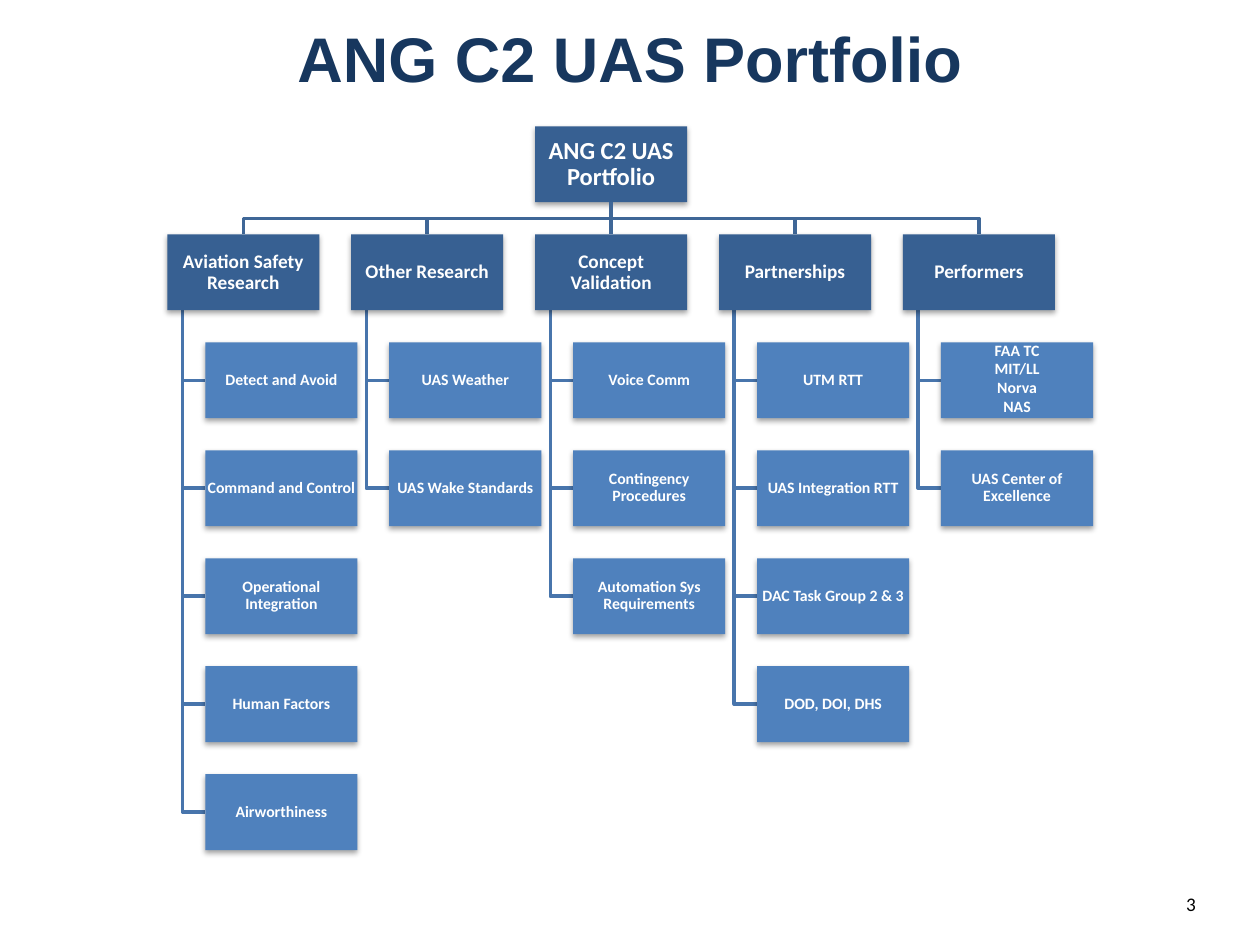
"""Build the ANG C2 UAS Portfolio organisation chart slide."""
from dataclasses import dataclass

import pptx
import pptx.dml.color
import pptx.enum.shapes
import pptx.enum.text
import pptx.oxml
import pptx.oxml.ns
import pptx.util
from pptx.util import Pt


@dataclass(frozen=True)
class Theme:
    title: str = "17375E"
    head: str = "376092"
    item: str = "4F81BD"
    trunk: str = "3F6797"
    branch: str = "4875AC"
    label: str = "FFFFFF"
    number: str = "000000"
    title_size: float = 36
    root_size: float = 14
    head_size: float = 11
    item_size: float = 9
    title_font: str = "Arial"
    font: str = "Calibri"


theme = Theme()
rgb = pptx.dml.color.RGBColor.from_string
align = pptx.enum.text.PP_ALIGN
anchor = pptx.enum.text.MSO_ANCHOR
SHADOW = (
    f'<a:outerShdw {pptx.oxml.ns.nsdecls("a")} blurRad="40000" dist="23000" dir="5400000" '
    'rotWithShape="0"><a:srgbClr val="000000"><a:alpha val="35000"/></a:srgbClr></a:outerShdw>'
)

portfolio = {
    "Aviation Safety Research": [
        "Detect and Avoid", "Command and Control", "Operational Integration",
        "Human Factors", "Airworthiness"],
    "Other Research": ["UAS Weather", "UAS Wake Standards"],
    "Concept Validation": [
        "Voice Comm", "Contingency Procedures", "Automation Sys Requirements"],
    "Partnerships": [
        "UTM RTT", "UAS Integration RTT", "DAC Task Group 2 & 3", "DOD, DOI, DHS"],
    "Performers": ["FAA TC\nMIT/LL\nNorva\nNAS", "UAS Center of Excellence"],
}
box_width, box_height = 86.9, 43.4
column_pitch, row_pitch = 105.1, 61.7
chart_left, chart_top = 95.6, 72.2
stem_indent, item_indent = box_width / 10, box_width / 4
head_top = chart_top + row_pitch
root_left = chart_left + 2 * column_pitch
root_middle = root_left + box_width / 2
root_bottom = chart_top + box_height
bus_y = (root_bottom + head_top) / 2

deck = pptx.Presentation()
deck.slide_width, deck.slide_height = Pt(720), Pt(540)
slide = deck.slides.add_slide(deck.slide_layouts[5])


def add_route(points, color):
    start, *rest = [(Pt(x), Pt(y)) for x, y in points]
    builder = slide.shapes.build_freeform(*start)
    builder.add_line_segments(rest, close=False)
    route = builder.convert_to_shape()
    route.shadow.inherit = False
    route.fill.background()
    route.line.color.rgb = rgb(color)
    route.line.width = Pt(2)


def add_box(label, left, top, color, size):
    box = slide.shapes.add_shape(
        pptx.enum.shapes.MSO_SHAPE.RECTANGLE,
        Pt(left), Pt(top), Pt(box_width), Pt(box_height))
    box.shadow.inherit = False
    effects = box._element.spPr.find(pptx.oxml.ns.qn("a:effectLst"))
    effects.append(pptx.oxml.parse_xml(SHADOW))
    box.fill.solid()
    box.fill.fore_color.rgb = rgb(color)
    box.line.fill.background()
    frame = box.text_frame
    frame.word_wrap = True
    frame.vertical_anchor = anchor.MIDDLE
    frame.margin_left = frame.margin_right = Pt(0.6)
    frame.margin_top = frame.margin_bottom = Pt(0.6)
    frame.text = label
    for paragraph in frame.paragraphs:
        paragraph.alignment = align.CENTER
        paragraph.line_spacing = 0.7 if "\n" in label else 0.9
        paragraph.space_after = Pt(size * 0.35)
        paragraph.font.name = theme.font
        paragraph.font.size = Pt(size)
        paragraph.font.bold = True
        paragraph.font.color.rgb = rgb(theme.label)
    return box


title = slide.shapes.title
title.left, title.top, title.width, title.height = Pt(36), Pt(0), Pt(648), Pt(66)
title.text_frame.text = "ANG C2 UAS Portfolio"
title.text_frame.vertical_anchor = anchor.MIDDLE
heading = title.text_frame.paragraphs[0]
heading.alignment = align.CENTER
heading.font.name = theme.title_font
heading.font.size = Pt(theme.title_size)
heading.font.bold = True
heading.font.color.rgb = rgb(theme.title)

for column, items in enumerate(portfolio.values()):
    head_left = chart_left + column * column_pitch
    head_middle = head_left + box_width / 2
    stem_x = head_left + stem_indent
    if head_left != root_left:
        add_route([(root_middle, root_bottom), (root_middle, bus_y),
                   (head_middle, bus_y), (head_middle, head_top)], theme.trunk)
    for row in range(len(items), 0, -1):
        item_middle = head_top + row * row_pitch + box_height / 2
        add_route([(stem_x, head_top + box_height), (stem_x, item_middle),
                   (head_left + item_indent, item_middle)], theme.branch)

root = add_box("ANG C2 UAS Portfolio", root_left, chart_top, theme.head, theme.root_size)
heads = []
for column, (area, items) in enumerate(portfolio.items()):
    head_left = chart_left + column * column_pitch
    heads.append(add_box(area, head_left, head_top, theme.head, theme.head_size))
    for row, item in enumerate(items, start=1):
        add_box(item, head_left + item_indent, head_top + row * row_pitch,
                theme.item, theme.item_size)

trunk = slide.shapes.add_connector(pptx.enum.shapes.MSO_CONNECTOR.STRAIGHT, 0, 0, 0, 0)
trunk.begin_connect(root, 2)
trunk.end_connect(heads[2], 0)
trunk.line.color.rgb = rgb(theme.trunk)
trunk.line.width = Pt(2)
trunk._element.spPr.append(
    pptx.oxml.parse_xml(f'<a:effectLst {pptx.oxml.ns.nsdecls("a")}/>'))

page_number = slide.shapes.add_textbox(Pt(522.7), Pt(506.2), Pt(167.8), Pt(17.3))
page_number.text_frame.word_wrap = True
page_number.text_frame.text = "3"
number_line = page_number.text_frame.paragraphs[0]
number_line.alignment = align.RIGHT
number_line.font.name = theme.font
number_line.font.size = Pt(theme.head_size)
number_line.font.color.rgb = rgb(theme.number)

deck.save("out.pptx")
